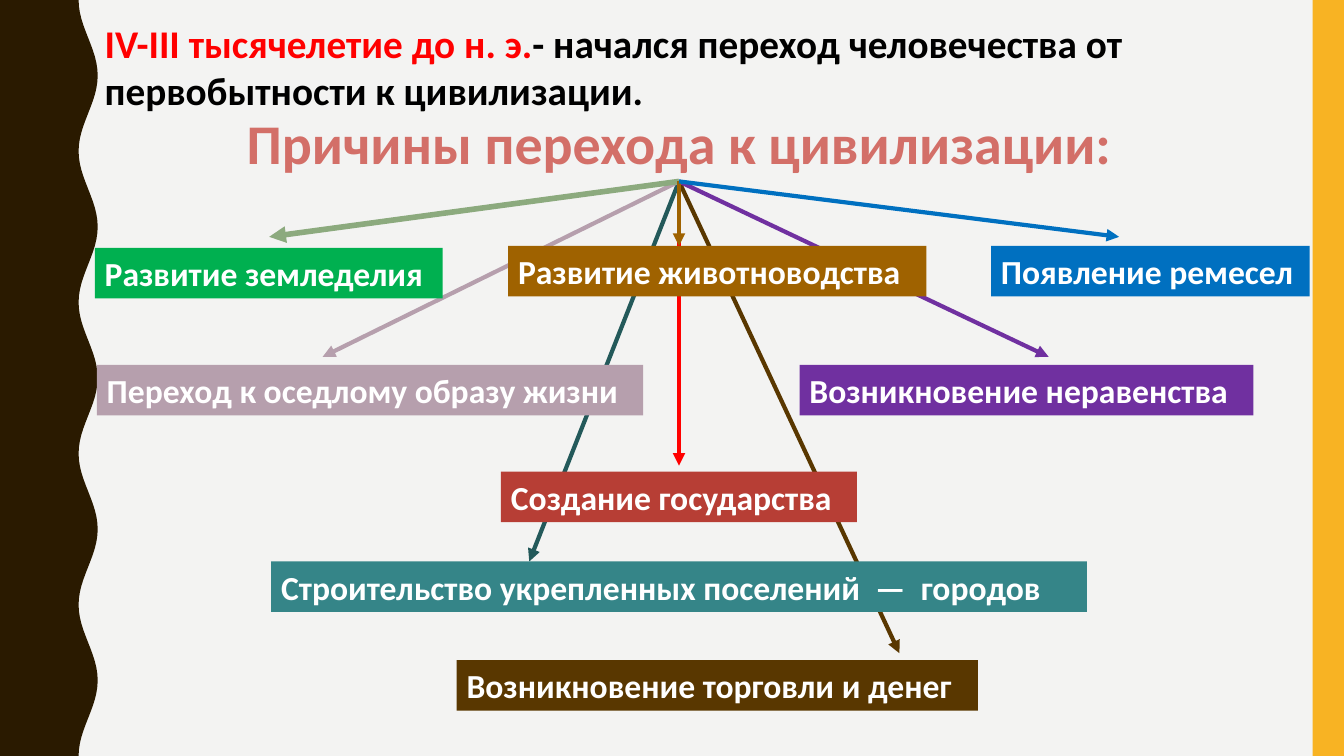
from dataclasses import dataclass
from math import cos, pi

from lxml.etree import SubElement
from pptx import Presentation
from pptx.dml.color import RGBColor
from pptx.enum.shapes import MSO_CONNECTOR, MSO_SHAPE
from pptx.enum.text import MSO_ANCHOR, MSO_AUTO_SIZE, PP_ALIGN
from pptx.oxml import parse_xml
from pptx.oxml.ns import nsdecls, qn
from pptx.util import Inches, Pt

# All positions and lengths are percentages of the slide's width and height
WIDTH, HEIGHT = 13.33, 7.5
BOX_HEIGHT = 6.67
CENTER, HEADING_BOTTOM = 50.52, 24


@dataclass
class Cause:
    text: str
    left: float
    top: float
    width: float
    color: str


@dataclass
class Arrow:
    x: float
    y: float
    color: str
    weight: float = 3


CAUSES = [
    Cause("Строительство укрепленных поселений  —  городов", 20.18, 74.27, 60.69, "358588"),
    Cause("Развитие земледелия", 7.05, 32.8, 25.88, "00B050"),
    Cause("Развитие животноводства", 37.81, 32.53, 31.13, "9F6200"),
    Cause("Появление ремесел", 73.74, 32.53, 23.71, "0070C0"),
    Cause("Переход к оседлому образу жизни", 7.2, 48.27, 40.66, "B69FAD"),
    Cause("Возникновение неравенства", 59.49, 48.27, 33.76, "7030A0"),
    Cause("Создание государства", 37.28, 62.4, 26.48, "B73E35"),
    Cause("Возникновение торговли и денег", 33.98, 87.33, 38.78, "593700"),
]
ARROWS_BEHIND = [
    Arrow(66.92, 86.4, "593700"),
    Arrow(39.38, 74.27, "23595A"),
    Arrow(CENTER, 61.6, "FF0000"),
    Arrow(78.02, 47.2, "7030A0"),
    Arrow(24.01, 47.2, "B69FAD"),
]
ARROWS_IN_FRONT = [
    Arrow(20.03, 31.33, "8CAA7E", 4),
    Arrow(CENTER, 32.53, "9F6200"),
    Arrow(83.27, 31.33, "0070C0"),
]


def across(share: float) -> int:
    return Inches(WIDTH * share / 100)


def down(share: float) -> int:
    return Inches(HEIGHT * share / 100)


def rgb(color: str) -> RGBColor:
    return RGBColor.from_string(color)


def paint(shape, color: str) -> None:
    shape.shadow.inherit = False
    shape.fill.solid()
    shape.fill.fore_color.rgb = rgb(color)
    shape.line.fill.background()


def set_frame(shape) -> None:
    frame = shape.text_frame
    frame.word_wrap = True
    frame.auto_size = MSO_AUTO_SIZE.NONE
    frame.vertical_anchor = MSO_ANCHOR.TOP


def add_run(paragraph, text: str, size: float, color: str):
    run = paragraph.add_run()
    run.text = text
    run.font.name = "Calibri"
    run.font.size = Pt(size)
    run.font.bold = True
    run.font.color.rgb = rgb(color)
    return run


def add_rectangle(slide, left: float, top: float, width: float, height: float, color: str):
    rectangle = slide.shapes.add_shape(
        MSO_SHAPE.RECTANGLE, across(left), down(top), across(width), down(height))
    paint(rectangle, color)
    return rectangle


def add_wave(slide) -> None:
    steps = 120
    edge = [(across(6.56 - 0.71 * cos(10 * pi * i / steps)), down(100 * i / steps))
            for i in range(steps + 1)]
    builder = slide.shapes.build_freeform(0, 0)
    builder.add_line_segments(edge + [(0, down(100))], close=True)
    paint(builder.convert_to_shape(), "2A1A00")


def add_cause(slide, cause: Cause) -> None:
    box = add_rectangle(slide, cause.left, cause.top, cause.width, BOX_HEIGHT, cause.color)
    set_frame(box)
    paragraph = box.text_frame.paragraphs[0]
    paragraph.alignment = PP_ALIGN.LEFT
    add_run(paragraph, cause.text, 24, "FFFFFF")


def add_arrow(slide, heading, arrow: Arrow) -> None:
    connector = slide.shapes.add_connector(
        MSO_CONNECTOR.STRAIGHT, across(CENTER), down(HEADING_BOTTOM),
        across(arrow.x), down(arrow.y))
    connector.begin_connect(heading, 2)
    connector.line.color.rgb = rgb(arrow.color)
    connector.line.width = Pt(arrow.weight)
    SubElement(connector.line._get_or_add_ln(), qn("a:tailEnd"), type="triangle")
    SubElement(connector._element.spPr, qn("a:effectLst"))


def add_heading(slide):
    heading = slide.shapes.title
    heading.left, heading.top = across(16.8), down(13.73)
    heading.width, heading.height = across(67.44), down(HEADING_BOTTOM - 13.73)
    set_frame(heading)
    paragraph = heading.text_frame.paragraphs[0]
    paragraph.alignment = PP_ALIGN.CENTER
    run = add_run(paragraph, "Причины перехода к цивилизации:", 40, "D36F68")
    # Thin white outline around the letters
    run.font._element.insert(0, parse_xml(
        f'<a:ln {nsdecls("a")} w="9525"><a:solidFill><a:srgbClr val="FFFFFF"/>'
        '</a:solidFill></a:ln>'))
    return heading


def add_intro(slide) -> None:
    intro = slide.shapes.add_textbox(across(7.05), down(1.87), across(90.4), down(13.87))
    set_frame(intro)
    paragraph = intro.text_frame.paragraphs[0]
    add_run(paragraph, "IV-III тысячелетие до н. э.", 28, "FF0000")
    add_run(paragraph, "- начался переход человечества от первобытности к цивилизации.",
            28, "000000")


def main() -> None:
    deck = Presentation()
    deck.slide_width, deck.slide_height = Inches(WIDTH), Inches(HEIGHT)
    slide = deck.slides.add_slide(deck.slide_layouts[5])
    slide.background.fill.solid()
    slide.background.fill.fore_color.rgb = rgb("F3F3F2")

    # Side decoration
    add_wave(slide)
    add_rectangle(slide, 97.67, 0, 2.33, 100, "F8B323")

    # Heading, causes and the arrows that fan out to them
    heading = add_heading(slide)
    for arrow in ARROWS_BEHIND:
        add_arrow(slide, heading, arrow)
    add_intro(slide)
    for cause in CAUSES:
        add_cause(slide, cause)
    for arrow in ARROWS_IN_FRONT:
        add_arrow(slide, heading, arrow)

    deck.save("out.pptx")


if __name__ == "__main__":
    main()
